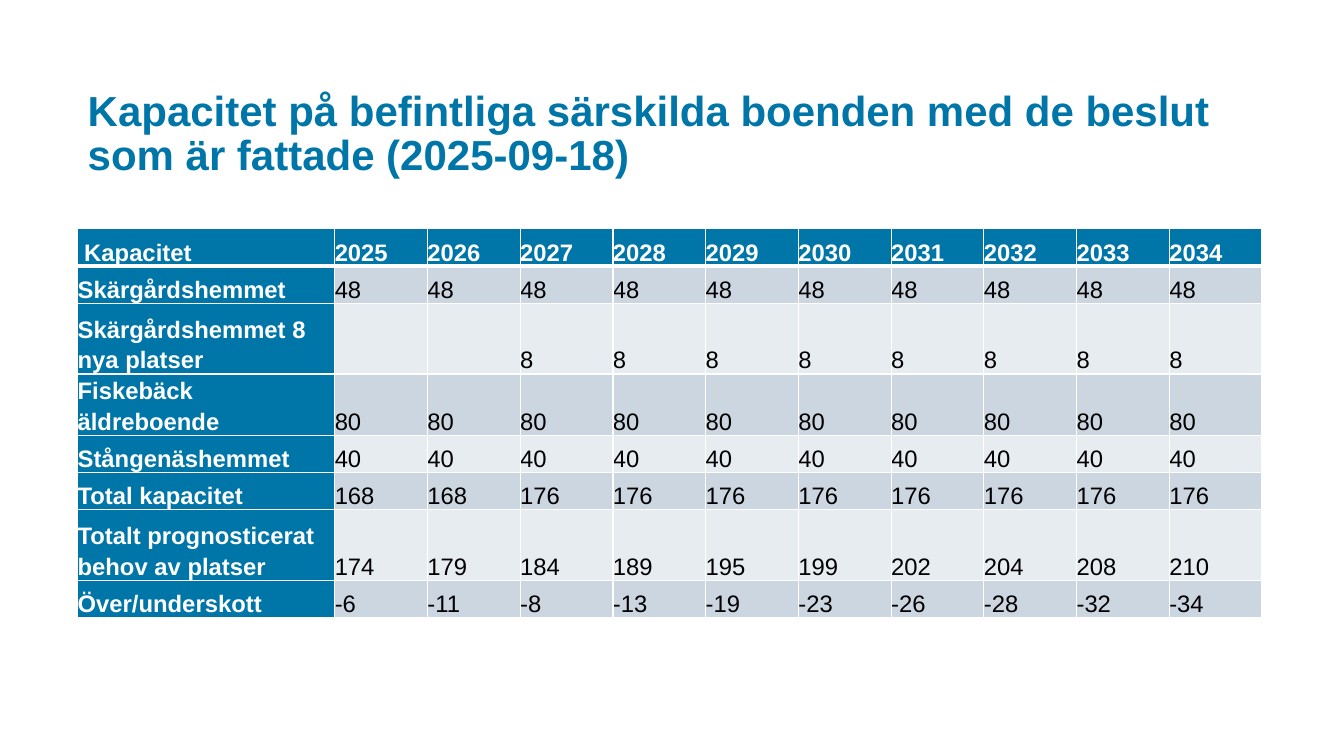
"""Build a slide with a table of care home capacity per year."""
from lxml import etree
from pptx import Presentation
from pptx.dml.color import RGBColor
from pptx.enum import text
from pptx.oxml import ns
from pptx.util import Inches, Pt

HUES = {"blue": "0076A8", "dark": "CCD6E1", "light": "E7ECF1",
        "white": "FFFFFF", "black": "000000"}
ROWS = [
    (0.37, "\u202fKapacitet".replace("\u202f", " "), list(range(2025, 2035))),
    (0.37, "Skärgårdshemmet", [48] * 10),
    (0.7, "Skärgårdshemmet 8 nya platser", [""] * 2 + [8] * 8),
    (0.37, "Fiskebäck äldreboende", [80] * 10),
    (0.37, "Stångenäshemmet", [40] * 10),
    (0.37, "Total kapacitet", [168] * 2 + [176] * 8),
    (0.7, "Totalt prognosticerat behov av platser",
     [174, 179, 184, 189, 195, 199, 202, 204, 208, 210]),
    (0.37, "Över/underskott",
     [-6, -11, -8, -13, -19, -23, -26, -28, -32, -34]),
]


def write(par, words, size, hue, bold):
    run = par.add_run()
    run.text = words
    look = {"name": "Arial", "size": Pt(size), "bold": bold}
    for key, val in look.items():
        setattr(run.font, key, val)
    run.font.color.rgb = RGBColor.from_string(HUES[hue])


def edge(cell, side, width):
    line = etree.SubElement(cell._tc.get_or_add_tcPr(), ns.qn("a:ln" + side),
                            w=str(Pt(width)))
    fill = etree.SubElement(line, ns.qn("a:solidFill"))
    etree.SubElement(fill, ns.qn("a:srgbClr"), val=HUES["white"])


prs = Presentation()
prs.slide_width, prs.slide_height = Inches(13.33), Inches(7.5)
slide = prs.slides.add_slide(prs.slide_layouts[5])

title = slide.shapes.title
place = {"left": 0.77, "top": 0.81, "width": 11.79, "height": 1.05}
for key, val in place.items():
    setattr(title, key, Inches(val))
frame = title.text_frame
frame.word_wrap = True
frame.auto_size = text.MSO_AUTO_SIZE.NONE
frame.vertical_anchor = text.MSO_ANCHOR.MIDDLE
par = frame.paragraphs[0]
form = {"alignment": text.PP_ALIGN.LEFT, "line_spacing": Pt(32),
        "space_before": Pt(0), "space_after": Pt(6)}
for key, val in form.items():
    setattr(par, key, val)
write(par, "Kapacitet på befintliga särskilda boenden med de beslut "
      "som är fattade (2025-09-18)", 30, "blue", True)

high = sum(row[0] for row in ROWS)
table = slide.shapes.add_table(len(ROWS), 11, Inches(0.77), Inches(2.27),
                               Inches(11.79), Inches(high)).table
for num, col in enumerate(table.columns):
    col.width = Inches(0.92 if num else 2.55)

form = {"line_spacing": 1.15, "space_before": Pt(0), "space_after": Pt(8)}
for r, (tall, label, vals) in enumerate(ROWS):
    table.rows[r].height = Inches(tall)
    for c, val in enumerate([label] + vals):
        cell = table.cell(r, c)
        for side in ("left", "right", "top", "bottom"):
            setattr(cell, "margin_" + side, 0)
        cell.vertical_anchor = text.MSO_ANCHOR.BOTTOM
        for side in "LRTB":
            thick = (r, side) in ((0, "B"), (1, "T"))
            edge(cell, side, 3 if thick else 1)
        head = r == 0 or c == 0
        band = "blue" if head else "dark" if r % 2 else "light"
        cell.fill.solid()
        cell.fill.fore_color.rgb = RGBColor.from_string(HUES[band])
        par = cell.text_frame.paragraphs[0]
        for key, spec in form.items():
            setattr(par, key, spec)
        if val != "":
            write(par, str(val), 17, "white" if head else "black", head)

prs.save("out.pptx")
